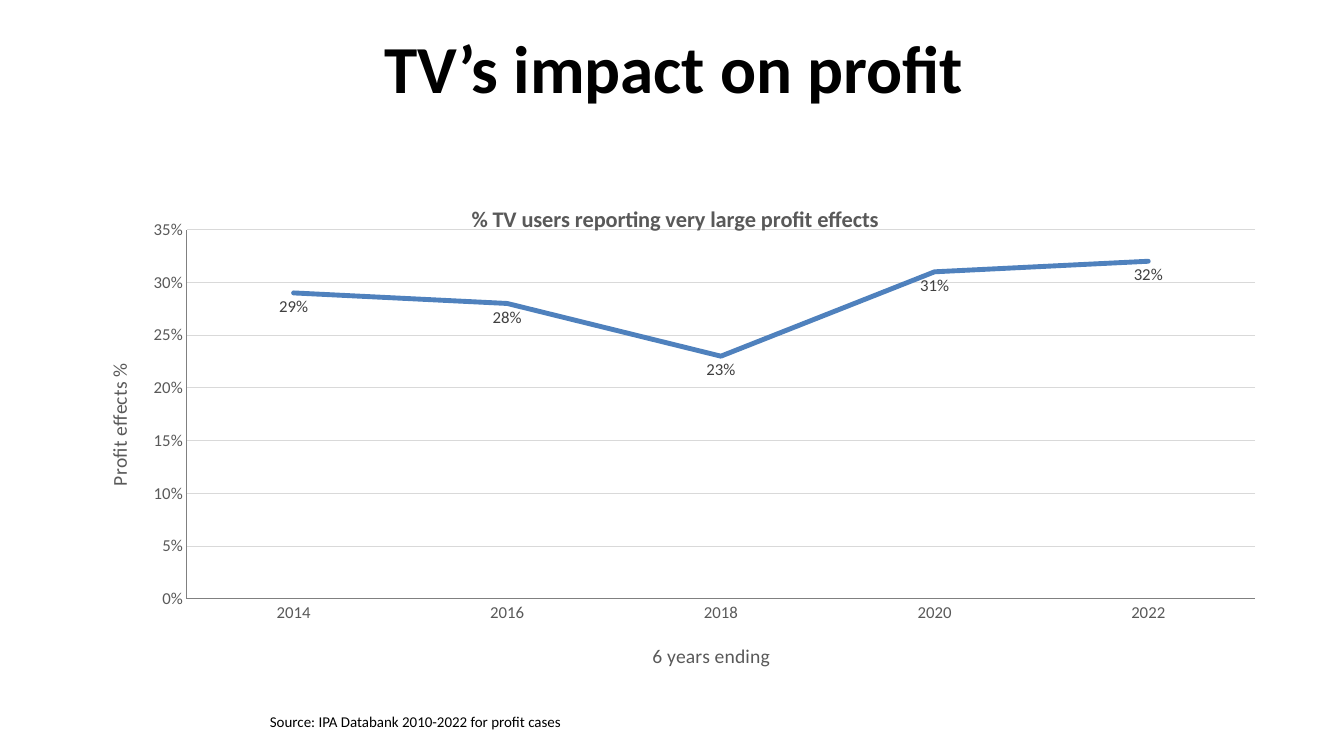
"""Build the slide on TV's impact on profit."""
from lxml import etree
from pptx import Presentation
from pptx import util as u
from pptx.chart.data import CategoryChartData
from pptx.dml.color import RGBColor
from pptx.enum import chart as charts, text
from pptx.oxml import ns

FONT = "Calibri"
COLORS = {"black": "000000", "gray": "595959", "label": "404040",
          "axis": "808080", "grid": "D9D9D9", "series": "4F81BD"}
SLIDE_SIZE = (1344, 756)
CHART_BOX = (67, 176, 1210, 499)
PLOT_BOX = (187, 230, 1069, 371)
TEXTS = [
    ("TV’s impact on profit", (69, 4, 1210, 126), 48, True,
     text.PP_ALIGN.CENTER, text.MSO_ANCHOR.MIDDLE),
    ("Source: IPA Databank 2010-2022 for profit cases", (260, 708, 529, 28), 10.7, False,
     text.PP_ALIGN.LEFT, text.MSO_ANCHOR.TOP),
]
PROFIT_EFFECTS = {"2014": 0.29, "2016": 0.28, "2018": 0.23, "2020": 0.31, "2022": 0.32}
CHART_TITLE = ("% TV users reporting very large profit effects", 16, True, (468, 200))
CATEGORY_TITLE = ("6 years ending", 14, False, (649, 641))
VALUE_TITLE = ("Profit effects %", 14, False, (102, 361))


def px(length):
    return u.Emu(round(length * 914400 / 100.8))


def style_font(font, size, color, bold=False):
    font.name, font.size, font.bold = FONT, u.Pt(size), bold
    font.color.rgb = RGBColor.from_string(COLORS[color])


def style_line(line, color, width):
    line.color.rgb = RGBColor.from_string(COLORS[color])
    line.width = u.Pt(width)


def add_text(slide, wording, box, size, bold, alignment, anchor):
    frame = slide.shapes.add_textbox(*map(px, box)).text_frame
    frame.word_wrap = True
    frame.vertical_anchor = anchor
    frame.text = wording
    paragraph = frame.paragraphs[0]
    paragraph.alignment = alignment
    style_font(paragraph.runs[0].font, size, "black", bold)


def place(element, box, index):
    """Put a manual layout in a chart element, at the given child index."""
    for old in element.findall(ns.qn("c:layout")):
        element.remove(old)
    layout = etree.Element(ns.qn("c:layout"))
    manual = etree.SubElement(layout, ns.qn("c:manualLayout"))
    left, top, width, height = CHART_BOX
    shares = [(box[0] - left) / width, (box[1] - top) / height]
    settings = [("xMode", "edge"), ("yMode", "edge")]
    if len(box) == 4:
        settings.insert(0, ("layoutTarget", "inner"))
        shares += [box[2] / width, box[3] / height]
    settings += [(name, f"{share:.3f}") for name, share in zip("xywh", shares)]
    for name, value in settings:
        etree.SubElement(manual, ns.qn("c:" + name)).set("val", value)
    element.insert(index, layout)


def add_title(title, wording, size, bold, position):
    title.text_frame.text = wording
    style_font(title.text_frame.paragraphs[0].runs[0].font, size, "gray", bold)
    place(title._element, position, 1)


def add_profit_chart(slide):
    data = CategoryChartData(number_format="0%")
    data.categories = list(PROFIT_EFFECTS)
    data.add_series("Series 1", list(PROFIT_EFFECTS.values()))
    chart = slide.shapes.add_chart(charts.XL_CHART_TYPE.LINE, *map(px, CHART_BOX), data).chart
    style_font(chart.font, 10, "black")
    chart.has_legend = False
    add_title(chart.chart_title, *CHART_TITLE)
    for axis, title in ((chart.category_axis, CATEGORY_TITLE), (chart.value_axis, VALUE_TITLE)):
        axis.major_tick_mark = axis.minor_tick_mark = charts.XL_TICK_MARK.NONE
        style_font(axis.tick_labels.font, 12, "gray")
        style_line(axis.format.line, "axis", 0.75)
        add_title(axis.axis_title, *title)

    value_axis = chart.value_axis
    value_axis.minimum_scale, value_axis.maximum_scale, value_axis.major_unit = 0, 0.35, 0.05
    value_axis.tick_labels.number_format = "0%"
    value_axis.tick_labels.number_format_is_linked = False
    style_line(value_axis.major_gridlines.format.line, "grid", 0.75)

    plot = chart.plots[0]
    plot.vary_by_categories = False
    series = plot.series[0]
    series.smooth = False
    series.marker.style = charts.XL_MARKER_STYLE.NONE
    style_line(series.format.line, "series", 3.5)
    series.format.line._ln.set("cap", "rnd")
    labels = series.data_labels
    labels.show_value = True
    labels.number_format, labels.number_format_is_linked = "0%", False
    labels.position = charts.XL_LABEL_POSITION.BELOW
    style_font(labels.font, 12, "label")
    place(chart._chartSpace.chart.plotArea, PLOT_BOX, 0)


def main():
    presentation = Presentation()
    presentation.slide_width, presentation.slide_height = map(px, SLIDE_SIZE)
    slide = presentation.slides.add_slide(presentation.slide_layouts[6])
    add_profit_chart(slide)
    for item in TEXTS:
        add_text(slide, *item)
    presentation.save("out.pptx")


if __name__ == "__main__":
    main()
